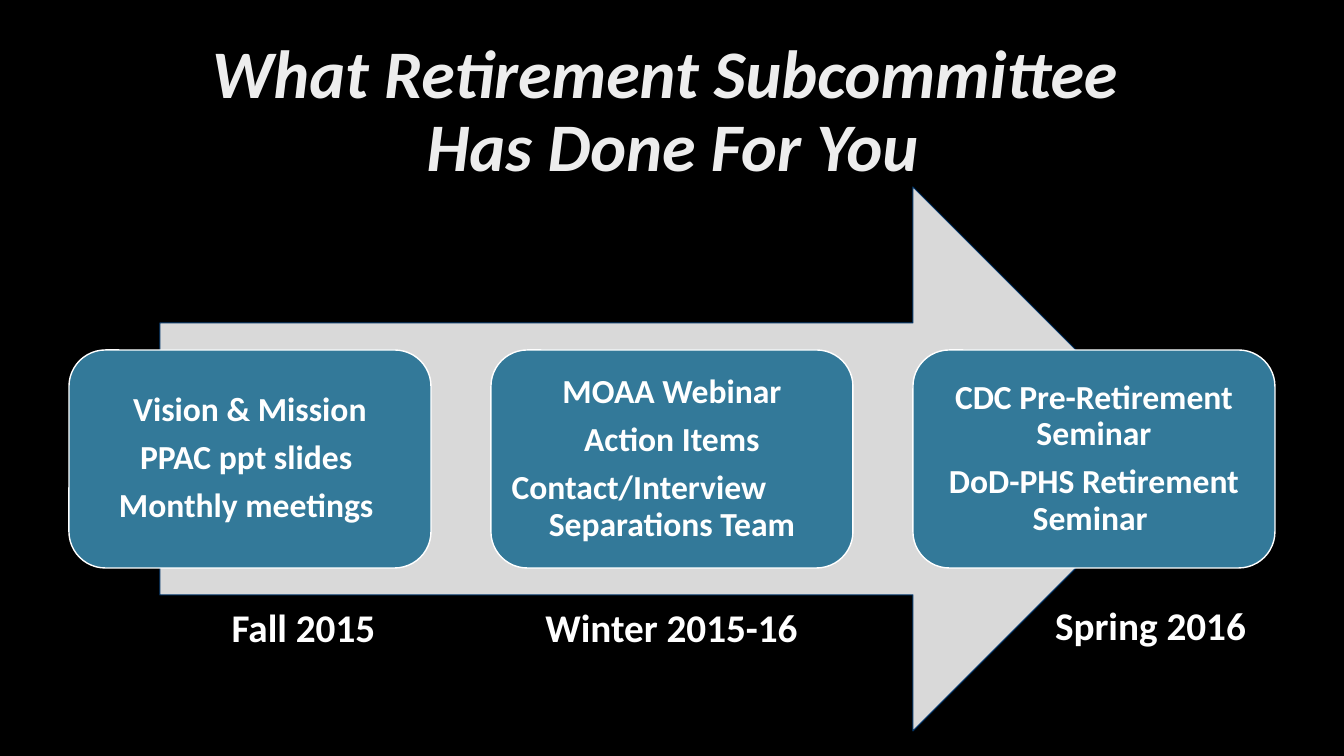
"""Build the retirement subcommittee timeline slide."""
from pptx import Presentation
from pptx.dml.color import RGBColor
from pptx.enum.shapes import MSO_SHAPE as Shape
from pptx.enum.text import MSO_ANCHOR as Anchor, PP_ALIGN as Align
from pptx.util import Pt

TITLE = "What Retirement Subcommittee \vHas Done For You"
STAGES = [
    ["Vision & Mission", "PPAC ppt slides ", "Monthly meetings "],
    ["MOAA Webinar", "Action Items", "Contact/Interview", "Separations Team"],
    ["CDC Pre-Retirement Seminar", "DoD-PHS Retirement Seminar "],
]
LEFT_ALIGNED = "Contact/Interview"
LABELS = [
    ("Fall 2015", (175, 598, 257, 57)),
    ("Winter 2015-16", (521, 598, 301, 57)),
    ("Spring 2016", (956, 596, 389, 57)),
]
COLORS = {"back": "000000", "title": "EDEDED", "arrow": "D9D9D9",
          "edge": "003366", "stage": "337999", "white": "FFFFFF"}
TITLE_AREA = (93, 40, 1159, 146)
ARROW_AREA = (160, 187, 1025, 544)
STAGE_LEFT, STAGE_TOP, STAGE_WIDTH, STAGE_HEIGHT, STAGE_STEP = 69, 350, 362, 218, 422
STAGE_INSET = 10
PX = 914400 / 100.8


def px(length):
    return round(length * PX)


def color(name):
    return RGBColor.from_string(COLORS[name])


def set_all(target, values):
    for name, value in values.items():
        setattr(target, name, value)


def write(frame, lines, size, tint="white", italic=False, **layout):
    frame.word_wrap = True
    for index, line in enumerate(lines):
        para = frame.paragraphs[0] if index == 0 else frame.add_paragraph()
        para.text = line
        set_all(para, {"alignment": Align.CENTER, **layout})
        if line == LEFT_ALIGNED:
            set_all(para, {"alignment": Align.LEFT, "space_after": Pt(0)})
        for span in para.runs:
            set_all(span.font, {"name": "Calibri", "size": Pt(size),
                                "bold": True, "italic": italic})
            span.font.color.rgb = color(tint)


def add_block(page, kind, area, fill, line, width):
    block = page.shapes.add_shape(kind, *map(px, area))
    block.shadow.inherit = False
    block.fill.solid()
    block.fill.fore_color.rgb = color(fill)
    block.line.color.rgb = color(line)
    block.line.width = Pt(width)
    return block


def main():
    deck = Presentation()
    set_all(deck, {"slide_width": px(1344), "slide_height": px(756)})
    page = deck.slides.add_slide(deck.slide_layouts[5])
    page.background.fill.solid()
    page.background.fill.fore_color.rgb = color("back")

    title = page.shapes.title
    set_all(title, dict(zip(("left", "top", "width", "height"), map(px, TITLE_AREA))))
    title.text_frame.vertical_anchor = Anchor.MIDDLE
    write(title.text_frame, [TITLE], 48.6, "title", True, line_spacing=0.9)

    add_block(page, Shape.RIGHT_ARROW, ARROW_AREA, "arrow", "edge", 0.75)

    for index, lines in enumerate(STAGES):
        area = (STAGE_LEFT + index * STAGE_STEP, STAGE_TOP, STAGE_WIDTH, STAGE_HEIGHT)
        box = add_block(page, Shape.ROUNDED_RECTANGLE, area, "stage", "white", 1)
        frame = box.text_frame
        set_all(frame, {f"margin_{side}": px(STAGE_INSET)
                        for side in ("left", "top", "right", "bottom")})
        frame.vertical_anchor = Anchor.MIDDLE
        write(frame, lines, 24, line_spacing=0.9, space_after=Pt(8.4))

    for text, area in LABELS:
        label = page.shapes.add_textbox(*map(px, area))
        write(label.text_frame, [text], 28)

    deck.save("out.pptx")


if __name__ == "__main__":
    main()
